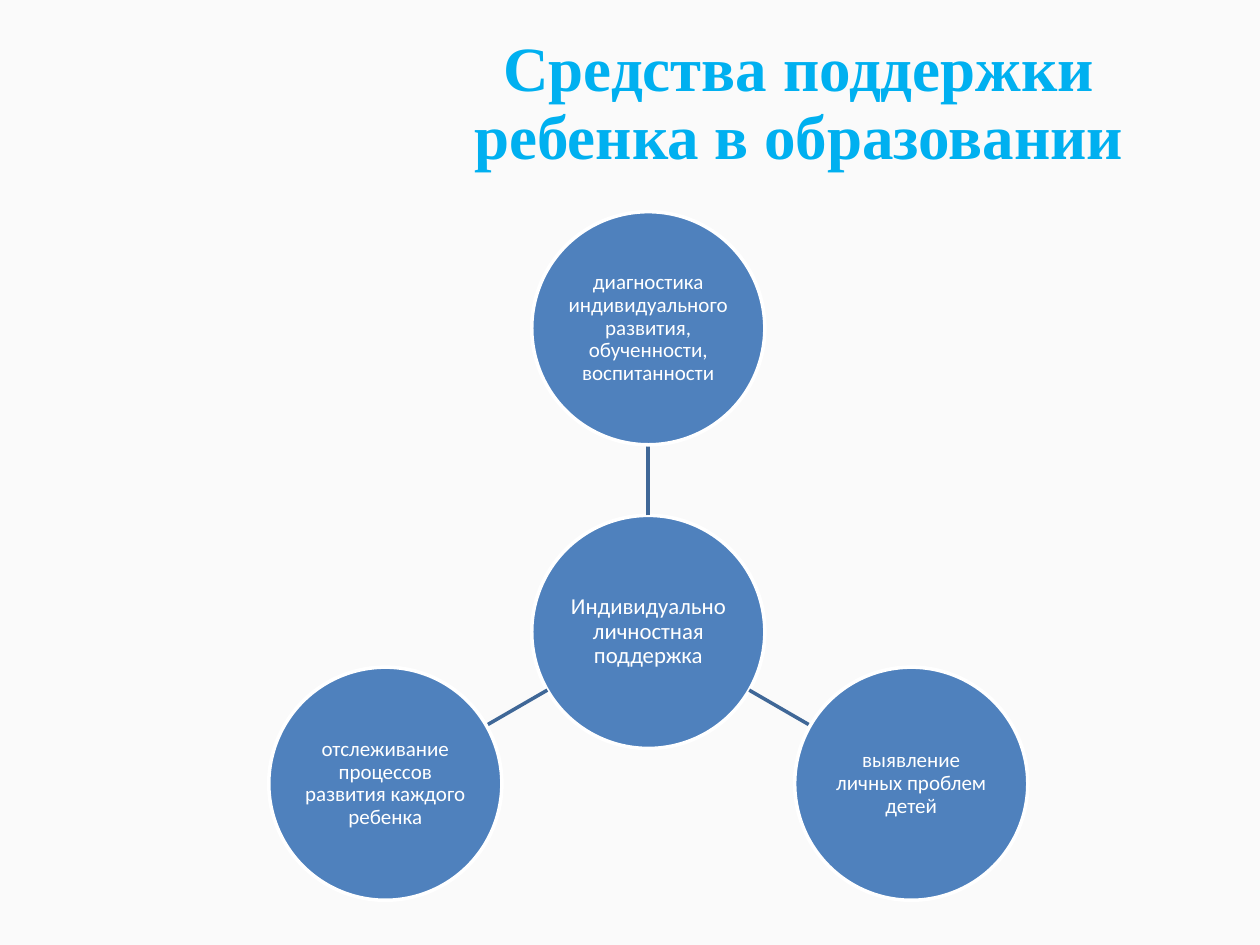
import math

from lxml import etree
from pptx import Presentation, util as u
from pptx.dml.color import RGBColor
from pptx.enum import shapes, text
from pptx.oxml.ns import qn

WIDTH, HEIGHT = 10, 7.5
COLOURS = {
    "background": "FAFAFA",
    "title": "00B0F0",
    "circle": "4F81BD",
    "spoke": "3F6797",
    "white": "FFFFFF",
}
TITLE_FONT = {"name": "Times New Roman", "size": u.Pt(36), "bold": True}
HUB_FONT = {"name": "Calibri", "size": u.Pt(13)}
SATELLITE_FONT = {"name": "Calibri", "size": u.Pt(12)}


def colour(key):
    return RGBColor.from_string(COLOURS[key])


class Diagram:
    """Style and current slide; lengths are shares of the slide's width."""

    def __init__(self, slide):
        self.slide = slide
        self.slide.background.fill.solid()
        self.slide.background.fill.fore_color.rgb = colour("background")

    def length(self, share):
        return u.Inches(share * WIDTH)

    def label(self, shape, words, font, ink, inset):
        frame = shape.text_frame
        frame.word_wrap = True
        frame.vertical_anchor = text.MSO_ANCHOR.MIDDLE
        for side in ("left", "right", "top", "bottom"):
            setattr(frame, f"margin_{side}", u.Inches(inset))
        paragraph = frame.paragraphs[0]
        paragraph.text = words
        paragraph.alignment = text.PP_ALIGN.CENTER
        paragraph.line_spacing = 0.9
        for key, value in font.items():
            setattr(paragraph.font, key, value)
        paragraph.font.color.rgb = colour(ink)

    def title(self, words, *box):
        heading = self.slide.shapes.add_textbox(*map(self.length, box))
        self.label(heading, words, TITLE_FONT, "title", 0.05)

    def circle(self, words, centre, radius, font):
        x, y = centre
        box = (x - radius, y - radius, 2 * radius, 2 * radius)
        disc = self.slide.shapes.add_shape(
            shapes.MSO_SHAPE.OVAL, *map(self.length, box))
        disc.shadow.inherit = False
        disc.fill.solid()
        disc.fill.fore_color.rgb = colour("circle")
        disc.line.color.rgb = colour("white")
        disc.line.width = u.Pt(2)
        self.label(disc, words, font, "white", 0.01)

    def spoke(self, start, end):
        line = self.slide.shapes.add_connector(
            shapes.MSO_CONNECTOR.STRAIGHT, *map(self.length, start + end))
        line.line.color.rgb = colour("spoke")
        line.line.width = u.Pt(2)
        etree.SubElement(line._element.spPr, qn("a:effectLst"))


def around(centre, distance, degrees):
    angle = math.radians(degrees)
    return (centre[0] + distance * math.cos(angle),
            centre[1] + distance * math.sin(angle))


def main():
    deck = Presentation()
    deck.slide_width, deck.slide_height = u.Inches(WIDTH), u.Inches(HEIGHT)
    diagram = Diagram(deck.slides.add_slide(deck.slide_layouts[6]))

    # Title
    diagram.title("Средства поддержки\vребенка в образовании",
                  0.294, 0.022, 0.68, 0.123)

    # Hub
    hub, radius, orbit = (0.5145, 0.5015), 0.0925, 0.241
    diagram.circle("Индивидуально личностная поддержка", hub, radius, HUB_FONT)

    # Satellites, evenly spread clockwise from the top
    means = [
        "диагностика индивидуального развития, обученности, воспитанности",
        "выявление личных проблем детей",
        "отслеживание процессов развития каждого ребенка",
    ]
    for index, words in enumerate(means):
        degrees = -90 + index * 360 / len(means)
        diagram.spoke(around(hub, radius, degrees),
                      around(hub, orbit - radius, degrees))
        diagram.circle(words, around(hub, orbit, degrees), radius,
                       SATELLITE_FONT)

    deck.save("out.pptx")


if __name__ == "__main__":
    main()
